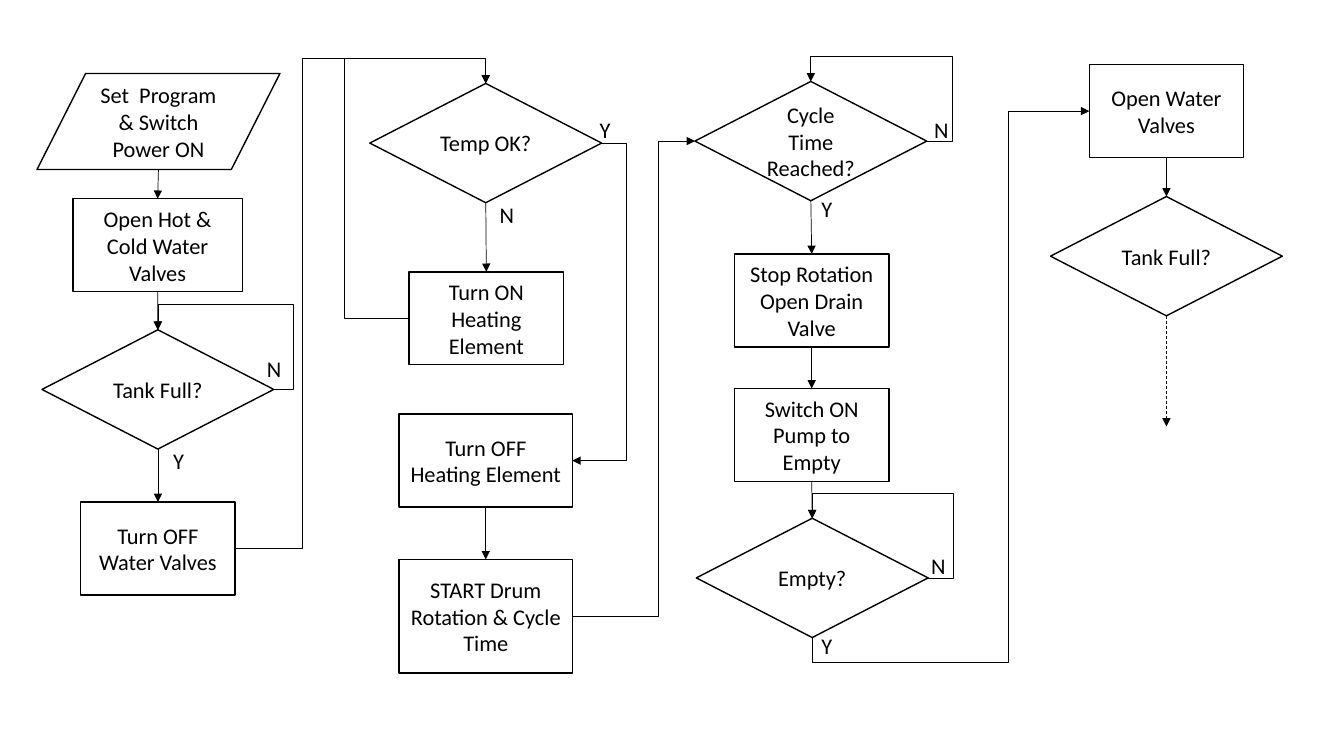
import dataclasses
import typing

import lxml.etree
import pptx
import pptx.dml.color
import pptx.enum.dml
import pptx.enum.shapes
import pptx.enum.text
import pptx.oxml.ns
import pptx.shapes.autoshape
import pptx.shapes.connector
import pptx.slide
import pptx.text.text
import pptx.util

Pt = pptx.util.Pt
Kind = pptx.enum.shapes.MSO_SHAPE
Wire = pptx.enum.shapes.MSO_CONNECTOR
Align = pptx.enum.text.PP_ALIGN
Shape = pptx.shapes.autoshape.Shape
Line = pptx.shapes.connector.Connector

COLORS = {"ink": "000000", "paper": "FFFFFF"}
FONT = "Calibri"
TOP, LEFT, BOTTOM, RIGHT = range(4)


@dataclasses.dataclass
class Step:
    name: str
    text: str
    mid: float
    top: float
    width: float = 110.2
    height: float = 66.4
    kind: Kind = Kind.FLOWCHART_PROCESS


@dataclasses.dataclass
class Test(Step):
    width: float = 165.6
    height: float = 85.2
    kind: Kind = Kind.FLOWCHART_DECISION


@dataclasses.dataclass
class Bend:
    """An elbow that leaves sideways, turns at x and, if given, at y."""
    start: str
    side: int
    end: str
    into: int
    x: float
    y: typing.Optional[float] = None
    arrow: str = "tailEnd"


@dataclasses.dataclass
class Label:
    text: str
    left: float
    top: float


STEPS = [
    Step("set", "Set  Program & Switch Power ON", 113.2, 52.5, 173.5, 68.6,
         Kind.FLOWCHART_DATA),
    Step("open", "Open Hot & Cold Water Valves", 112.6, 142, 121),
    Test("full", "Tank Full?", 112.8, 235.6),
    Step("shut", "Turn OFF Water Valves", 112.8, 358.6),
    Test("temp", "Temp OK?", 347, 59.6),
    Step("heat", "Turn ON Heating Element", 347.4, 194.2),
    Step("cool", "Turn OFF Heating Element", 347, 295.8, 123.8),
    Step("drum", "START Drum Rotation & Cycle Time", 347, 399.6, 123.8, 81),
    Test("cycle", "Cycle Time Reached?", 579.2, 58.2),
    Step("drain", "Stop Rotation\nOpen Drain Valve", 579.8, 181.4),
    Step("pump", "Switch ON Pump to Empty", 579.8, 277.5),
    Test("empty", "Empty?", 580.2, 370.2),
    Step("rinse", "Open Water Valves", 833.2, 46.2),
    Test("refill", "Tank Full?", 833.2, 140.4),
]

DROPS = [
    ("open", "full"), ("full", "shut"), ("temp", "heat"), ("cool", "drum"),
    ("cycle", "drain"), ("drain", "pump"), ("pump", "empty"),
    ("rinse", "refill"),
]

BENDS = [
    Bend("full", RIGHT, "full", TOP, 209.5, 217.5),
    Bend("shut", RIGHT, "temp", TOP, 216.2, 41.6),
    Bend("heat", LEFT, "temp", TOP, 246.2, 41.6),
    Bend("temp", RIGHT, "cool", RIGHT, 447.8),
    Bend("drum", RIGHT, "cycle", LEFT, 470.4),
    Bend("cycle", RIGHT, "cycle", TOP, 680.2, 40.2),
    Bend("empty", RIGHT, "empty", TOP, 681.2, 352.2),
    Bend("rinse", LEFT, "empty", BOTTOM, 720.5, 473.2, "headEnd"),
]

LABELS = [
    Label("N", 183.6, 249.8), Label("Y", 116.6, 316.1),
    Label("N", 349.9, 140.4), Label("Y", 421.2, 79.2),
    Label("Y", 579.6, 136.1), Label("N", 660.2, 79.2),
    Label("N", 658.1, 391), Label("Y", 579.6, 447.8),
]


def color(name: str) -> pptx.dml.color.RGBColor:
    return pptx.dml.color.RGBColor.from_string(COLORS[name])


def write(frame: pptx.text.text.TextFrame, text: str, align: Align) -> None:
    frame.word_wrap = True
    frame.text = text
    for para in frame.paragraphs:
        para.alignment = align
        para.font.name = FONT
        para.font.size = Pt(16)
        para.font.color.rgb = color("ink")


def draw_step(slide: pptx.slide.Slide, step: Step) -> Shape:
    shape = slide.shapes.add_shape(
        step.kind, Pt(step.mid - step.width / 2), Pt(step.top),
        Pt(step.width), Pt(step.height))
    shape.shadow.inherit = False
    shape.fill.solid()
    shape.fill.fore_color.rgb = color("paper")
    shape.line.color.rgb = color("ink")
    shape.line.width = Pt(1)
    shape.text_frame.vertical_anchor = pptx.enum.text.MSO_ANCHOR.MIDDLE
    write(shape.text_frame, step.text, Align.CENTER)
    return shape


def draw_line(slide: pptx.slide.Slide, kind: Wire = Wire.STRAIGHT,
              start: tuple[float, float] = (0, 0),
              end: tuple[float, float] = (0, 0),
              arrow: str = "tailEnd") -> Line:
    line = slide.shapes.add_connector(kind, *map(Pt, start + end))
    line.line.color.rgb = color("ink")
    line.line.width = Pt(0.5)
    qn = pptx.oxml.ns.qn
    tip = lxml.etree.SubElement(line.line._get_or_add_ln(), qn(f"a:{arrow}"))
    tip.set("type", "triangle")
    lxml.etree.SubElement(line.element.spPr, qn("a:effectLst"))
    return line


def draw_bend(slide: pptx.slide.Slide, bend: Bend,
              shapes: dict[str, Shape]) -> None:
    line = draw_line(slide, Wire.ELBOW, arrow=bend.arrow)
    line.begin_connect(shapes[bend.start], bend.side)
    line.end_connect(shapes[bend.end], bend.into)
    turns = [(Pt(bend.x) - line.begin_x) / (line.end_x - line.begin_x)]
    if bend.y is not None:
        turns.append((Pt(bend.y) - line.begin_y) / (line.end_y - line.begin_y))
    form = line.element.xpath(".//a:prstGeom")[0]
    form.set("prst", f"bentConnector{len(turns) + 2}")
    guides = form.xpath("a:avLst")[0]
    for num, turn in enumerate(turns, 1):
        guide = lxml.etree.SubElement(guides, pptx.oxml.ns.qn("a:gd"))
        guide.set("name", f"adj{num}" if len(turns) > 1 else "adj1")
        guide.set("fmla", f"val {round(turn * 100000)}")


def main() -> None:
    deck = pptx.Presentation()
    deck.slide_width, deck.slide_height = Pt(960), Pt(540)
    slide = deck.slides.add_slide(deck.slide_layouts[6])
    shapes = {step.name: draw_step(slide, step) for step in STEPS}

    draw_line(slide, start=(113.2, 121.1), end=(112.6, 142)).end_connect(
        shapes["open"], TOP)
    for start, end in DROPS:
        drop = draw_line(slide)
        drop.begin_connect(shapes[start], BOTTOM)
        drop.end_connect(shapes[end], TOP)
    for bend in BENDS:
        draw_bend(slide, bend, shapes)
    trail = draw_line(slide, start=(833.2, 225.6), end=(833.2, 304.6))
    trail.begin_connect(shapes["refill"], BOTTOM)
    trail.line.dash_style = pptx.enum.dml.MSO_LINE.DASH

    for label in LABELS:
        box = slide.shapes.add_textbox(
            Pt(label.left), Pt(label.top), Pt(25), Pt(26.6))
        write(box.text_frame, label.text, Align.LEFT)
    deck.save("out.pptx")


if __name__ == "__main__":
    main()
